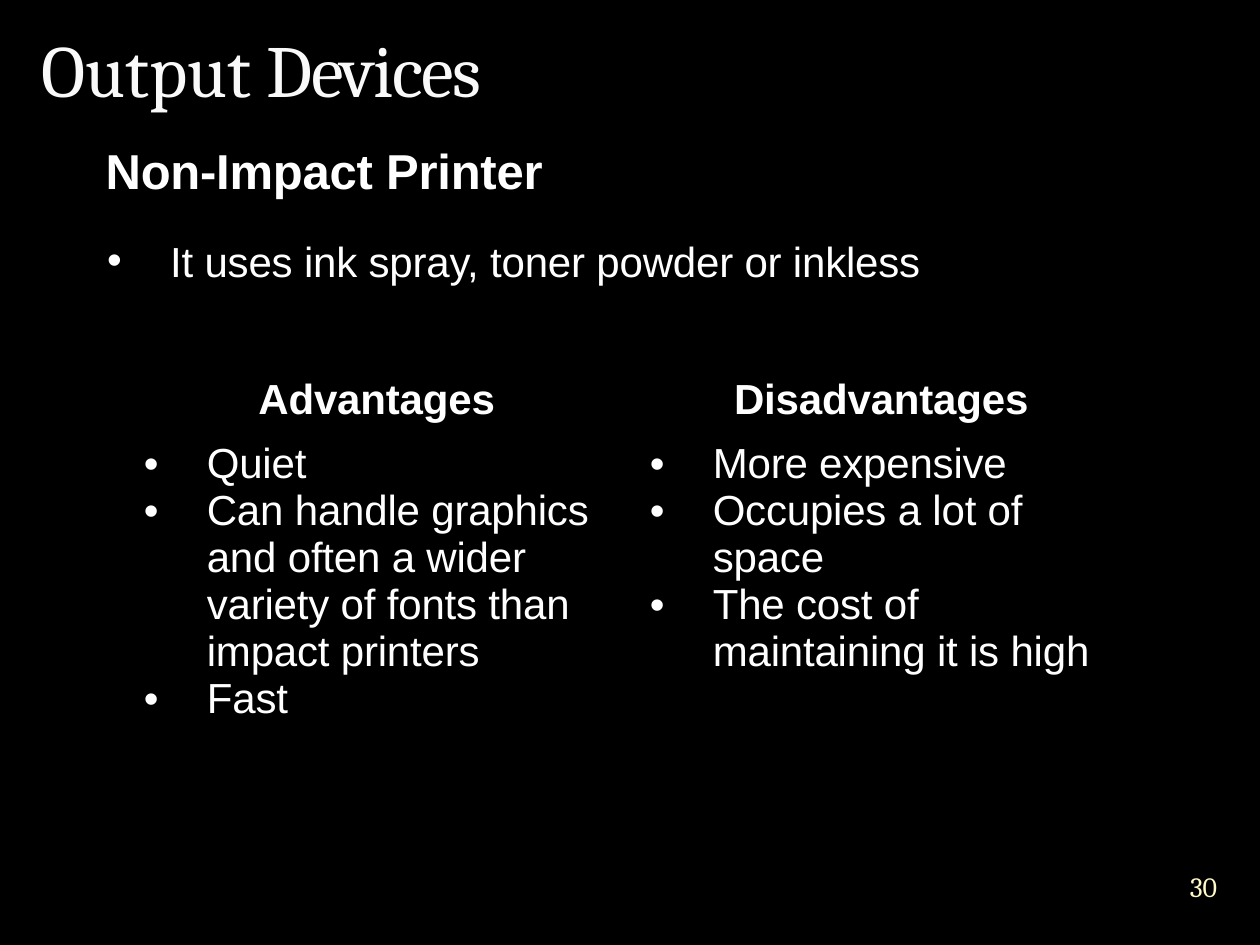
from pptx import Presentation
from pptx.dml.color import RGBColor
from pptx.enum.text import MSO_ANCHOR, PP_ALIGN
from pptx.oxml.ns import qn
from pptx.util import Cm, Pt
from lxml import etree

TOP, MIDDLE, BOTTOM = MSO_ANCHOR.TOP, MSO_ANCHOR.MIDDLE, MSO_ANCHOR.BOTTOM
CENTER = PP_ALIGN.CENTER
COLORS = {"black": "000000", "title": "F9F9F9", "text": "FFFFFF", "number": "FEFAC9"}
HANGING = 1.27


def rgb(name):
    return RGBColor.from_string(COLORS[name])


class SlideBuilder:
    heading_font = "Cambria"
    body_font = "Arial"

    def __init__(self, prs):
        self.s = prs.slides.add_slide(prs.slide_layouts[6])
        fill = self.s.background.fill
        fill.solid()
        fill.fore_color.rgb = rgb("black")

    def text_box(self, left, top, width, height, anchor=TOP):
        sp = self.s.shapes.add_textbox(Cm(left), Cm(top), Cm(width), Cm(height))
        tf = sp.text_frame
        tf.word_wrap = True
        tf.vertical_anchor = anchor
        tf.margin_left = tf.margin_right = tf.margin_top = tf.margin_bottom = 0
        return tf

    def style(self, p, size, font=body_font, color="text", bold=False, spacing=-0.1):
        for r in p.runs:
            r.font.size = Pt(size)
            r.font.name = font
            r.font.bold = bold
            r.font.color.rgb = rgb(color)
            r.font._element.set("spc", str(round(spacing * 100)))

    def indent(self, p, left, hanging=0):
        pPr = p._p.get_or_add_pPr()
        pPr.set("marL", str(Cm(left)))
        pPr.set("indent", str(-Cm(hanging)))
        return pPr

    def bullet(self, p, text, left, size=24):
        p.text = text
        pPr = self.indent(p, left, HANGING)
        etree.SubElement(pPr, qn("a:buFont")).set("typeface", self.body_font)
        etree.SubElement(pPr, qn("a:buChar")).set("char", "•")
        self.style(p, size)

    def title(self, first, second):
        tf = self.text_box(0.84, 0.43, 23.29, 1.83, BOTTOM)
        p = tf.paragraphs[0]
        p.text = first
        self.style(p, 42, self.heading_font, "title")
        r = p.add_run()
        r.text = second
        r.font.size = Pt(42)
        r.font.name = self.heading_font
        r.font.color.rgb = rgb("title")
        r.font._element.set("spc", "-100")

    def intro(self, heading, point):
        tf = self.text_box(2.13, 2.79, 16.69, 3)
        tf.margin_top = Cm(0.05)
        p = tf.paragraphs[0]
        p.text = heading
        self.style(p, 28, bold=True)
        p = tf.add_paragraph()
        self.bullet(p, point, 1.3)
        p.space_before = Pt(20.3)

    def cell(self, cell):
        cell.margin_left = cell.margin_right = cell.margin_bottom = 0
        cell.margin_top = Cm(0.1)
        tcPr = cell._tc.get_or_add_tcPr()
        for side in ("lnL", "lnR", "lnT", "lnB"):
            ln = etree.SubElement(tcPr, qn(f"a:{side}"), w=str(Pt(1)))
            fill = etree.SubElement(ln, qn("a:solidFill"))
            etree.SubElement(fill, qn("a:srgbClr"), val=COLORS["black"])
        cell.fill.solid()
        cell.fill.fore_color.rgb = rgb("black")
        return cell.text_frame

    def comparison(self, columns):
        sp = self.s.shapes.add_table(2, len(columns), Cm(2.49), Cm(7.49), Cm(20.4), Cm(8.64))
        table = sp.table
        table.first_row = table.horz_banding = False
        table.rows[0].height = Cm(1.3)
        table.rows[1].height = Cm(7.34)
        for i, (heading, left, points) in enumerate(columns):
            p = self.cell(table.cell(0, i)).paragraphs[0]
            p.text = heading
            p.space_before = Pt(3)
            self.indent(p, left)
            self.style(p, 24, bold=True)
            tf = self.cell(table.cell(1, i))
            tf.paragraphs[0].space_before = Pt(2.5)
            for j, point in enumerate(points):
                p = tf.add_paragraph() if j else tf.paragraphs[0]
                self.bullet(p, point, 1.68)

    def page_number(self, number):
        tf = self.text_box(23.37, 17.17, 1.7, 1.27, MIDDLE)
        p = tf.paragraphs[0]
        p.text = number
        p.alignment = CENTER
        p.line_spacing = Pt(22.9)
        self.indent(p, 0.08)
        self.style(p, 16, self.heading_font, "number", spacing=0)


def main():
    prs = Presentation()
    prs.slide_width, prs.slide_height = Cm(25.4), Cm(19.05)
    slide = SlideBuilder(prs)
    slide.page_number("30")
    slide.title("Output ", "Devices")
    slide.intro("Non-Impact Printer", "It uses ink spray, toner powder or inkless")
    slide.comparison([
        ("Advantages", 2.72, [
            "Quiet",
            "Can handle graphics and often a wider variety of fonts than impact printers",
            "Fast",
        ]),
        ("Disadvantages", 2.11, [
            "More expensive",
            "Occupies a lot of space",
            "The cost of maintaining it is high",
        ]),
    ])
    prs.save("out.pptx")


if __name__ == "__main__":
    main()
